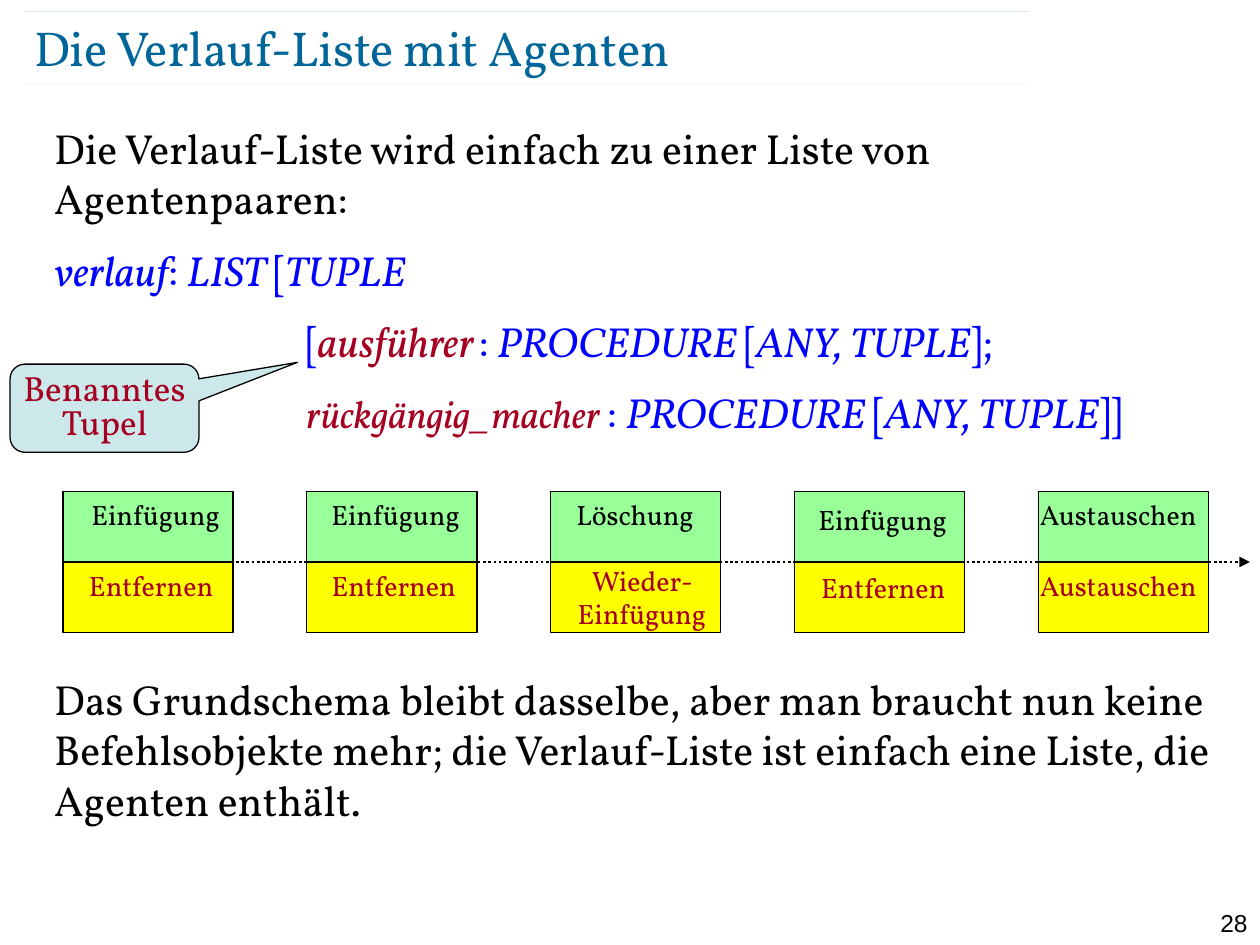
from lxml import etree
from pptx import Presentation
from pptx.dml.color import RGBColor
from pptx.enum.dml import MSO_LINE
from pptx.enum.shapes import MSO_CONNECTOR, MSO_SHAPE
from pptx.enum.text import MSO_ANCHOR, MSO_AUTO_SIZE, PP_ALIGN
from pptx.oxml.ns import qn
from pptx.util import Inches, Pt

STRAIGHT = MSO_CONNECTOR.STRAIGHT
RECTANGLE = MSO_SHAPE.RECTANGLE
CALLOUT = MSO_SHAPE.ROUNDED_RECTANGULAR_CALLOUT
DOTTED = MSO_LINE.ROUND_DOT
TOP, MIDDLE = MSO_ANCHOR.TOP, MSO_ANCHOR.MIDDLE
FIXED = MSO_AUTO_SIZE.NONE
LEFT, CENTER, RIGHT = PP_ALIGN.LEFT, PP_ALIGN.CENTER, PP_ALIGN.RIGHT

BLACK = RGBColor(0x00, 0x00, 0x00)
TEAL = RGBColor(0x00, 0x66, 0x99)
BLUE = RGBColor(0x00, 0x00, 0xFF)
RED = RGBColor(0xA5, 0x00, 0x21)
GREEN = RGBColor(0x99, 0xFF, 0x99)
YELLOW = RGBColor(0xFF, 0xFF, 0x00)
PALE = RGBColor(0xBB, 0xE0, 0xE3)

prs = Presentation()
prs.slide_width, prs.slide_height = Inches(10), Inches(7.5)
COL, ROW = prs.slide_width / 100, prs.slide_height / 75
slide = prs.slides.add_slide(prs.slide_layouts[1])
shapes = slide.shapes


def grid(x1, y1, x2, y2):
    return [round(n * unit) for n, unit in ((x1, COL), (y1, ROW), (x2, COL), (y2, ROW))]


def write(paragraph, text, size=24, color=BLACK, italic=False, font="Vollkorn", align=LEFT):
    paragraph.alignment = align
    run = paragraph.add_run()
    run.text = text
    run.font.name, run.font.size = font, Pt(size)
    run.font.italic = italic
    run.font.color.rgb = color


title = shapes.title
title.left, title.top, title.width, title.height = grid(2.7, 1.3, 86.9, 4.8)
heading = title.text_frame
heading.margin_left = heading.margin_right = heading.margin_top = heading.margin_bottom = 0
heading.vertical_anchor, heading.auto_size = MIDDLE, FIXED
write(heading.paragraphs[0], "Die Verlauf-Liste mit Agenten", size=28, color=TEAL)

code = {"color": BLUE}
code_italic = {"color": BLUE, "italic": True}
label = {"color": RED, "italic": True}
procedure = [("PROCEDURE ", code_italic), ("[", code), ("ANY, TUPLE", code_italic)]
explanation = [
    (0, 0, [("Die Verlauf-Liste wird einfach zu einer Liste von Agentenpaaren:", {})]),
    (0, 12, [("verlauf", code_italic), (": ", code), ("LIST ", code_italic),
             ("[", code), ("TUPLE", code_italic)]),
    (20, 12, [("[", code), ("ausführer", label), (" ", {**label, "size": 14}),
              (": ", code), *procedure, ("];", code)]),
    (20, 12, [("rückgängig_macher ", {**label, "size": 22}), (": ", code),
              *procedure, ("]]", code)]),
    (0, 135, [("Das Grundschema bleibt dasselbe, aber man braucht nun keine "
               "Befehlsobjekte mehr; die Verlauf-Liste ist einfach eine Liste, "
               "die Agenten enthält.", {})]),
]
body = slide.placeholders[1]
body.left, body.top, body.width, body.height = grid(3.3, 9.2, 94.2, 59.6)
body.text_frame.vertical_anchor, body.text_frame.auto_size = TOP, FIXED
for number, (indent, gap, parts) in enumerate(explanation):
    paragraph = body.text_frame.add_paragraph() if number else body.text_frame.paragraphs[0]
    properties = paragraph._p.get_or_add_pPr()
    properties.set("marL", str(round(indent * COL)))
    properties.set("indent", "0")
    etree.SubElement(properties, qn("a:buNone"))
    paragraph.space_before = Pt(gap)
    for text, style in parts:
        write(paragraph, text, **style)

for ends, color, weight, is_timeline in (
    ((1.8, 6.7, 81.5, 6.7), TEAL, 0.1, False),
    ((2, 0.9, 81.7, 0.9), TEAL, 0.1, False),
    ((15.8, 44.6, 99.2, 44.6), BLACK, 1.5, True),
):
    rule = shapes.add_connector(STRAIGHT, *grid(*ends))
    rule.line.color.rgb, rule.line.width = color, Pt(weight)
    outline = rule.line._get_or_add_ln()
    if is_timeline:
        rule.line.dash_style = DOTTED
        etree.SubElement(outline, qn("a:tailEnd"), type="triangle")
    else:
        etree.SubElement(outline.find(".//" + qn("a:srgbClr")), qn("a:alpha"), val="35000")
    etree.SubElement(rule._element.spPr, qn("a:effectLst"))

FIRST, PITCH, WIDTH, HEIGHT = 5, 19.35, 13.5, 5.6
steps = (
    (39, GREEN, BLACK, (("Einfügung", 5.9, 39, 12.9), ("Einfügung", 25.2, 39, 12.4),
                        ("Löschung", 44.5, 39, 11.8), ("Einfügung", 63.6, 39.4, 12.9),
                        ("Austauschen", 80.8, 39, 15.9))),
    (44.6, YELLOW, RED, (("Entfernen", 5.8, 44.6, 12.4), ("Entfernen", 24.9, 44.6, 12.7),
                         ("Wieder-Einfügung", 44.5, 44.2, 12.9),
                         ("Entfernen", 63.8, 44.8, 12.6),
                         ("Austauschen", 80.8, 44.6, 15.9))),
)
for top, fill, color, commands in steps:
    for number, (command, left, caption_top, width) in enumerate(commands):
        cell = shapes.add_shape(RECTANGLE, *grid(FIRST + number * PITCH, top, WIDTH, HEIGHT))
        cell.shadow.inherit = False
        cell.fill.solid()
        cell.fill.fore_color.rgb = fill
        cell.line.color.rgb, cell.line.width = BLACK, Pt(0.75)
        caption = shapes.add_textbox(*grid(left, caption_top, width, 3.7)).text_frame
        caption.word_wrap = True
        write(caption.paragraphs[0], command, size=16, color=color, align=CENTER)

callout = shapes.add_shape(CALLOUT, *grid(0.8, 28.9, 15, 7))
callout.shadow.inherit = False
callout.adjustments[0], callout.adjustments[1], callout.adjustments[2] = 1.02, -0.52, 0.17
callout.fill.solid()
callout.fill.fore_color.rgb = PALE
fill_color = callout._element.spPr.find(qn("a:solidFill")).find(qn("a:srgbClr"))
etree.SubElement(fill_color, qn("a:alpha"), val="72000")
callout.line.color.rgb, callout.line.width = BLACK, Pt(0.75)
hint = callout.text_frame
hint.margin_left = hint.margin_right = 0
hint.vertical_anchor, hint.word_wrap = MIDDLE, True
hint.paragraphs[0].line_spacing = 0.8
write(hint.paragraphs[0], "Benanntes Tupel", size=20, color=RED, align=CENTER)

page = shapes.add_textbox(*grid(94.5, 71.6, 5.5, 2.4)).text_frame
page.word_wrap = True
write(page.paragraphs[0], "28", size=14, font="Arial", align=RIGHT)

prs.save("out.pptx")
